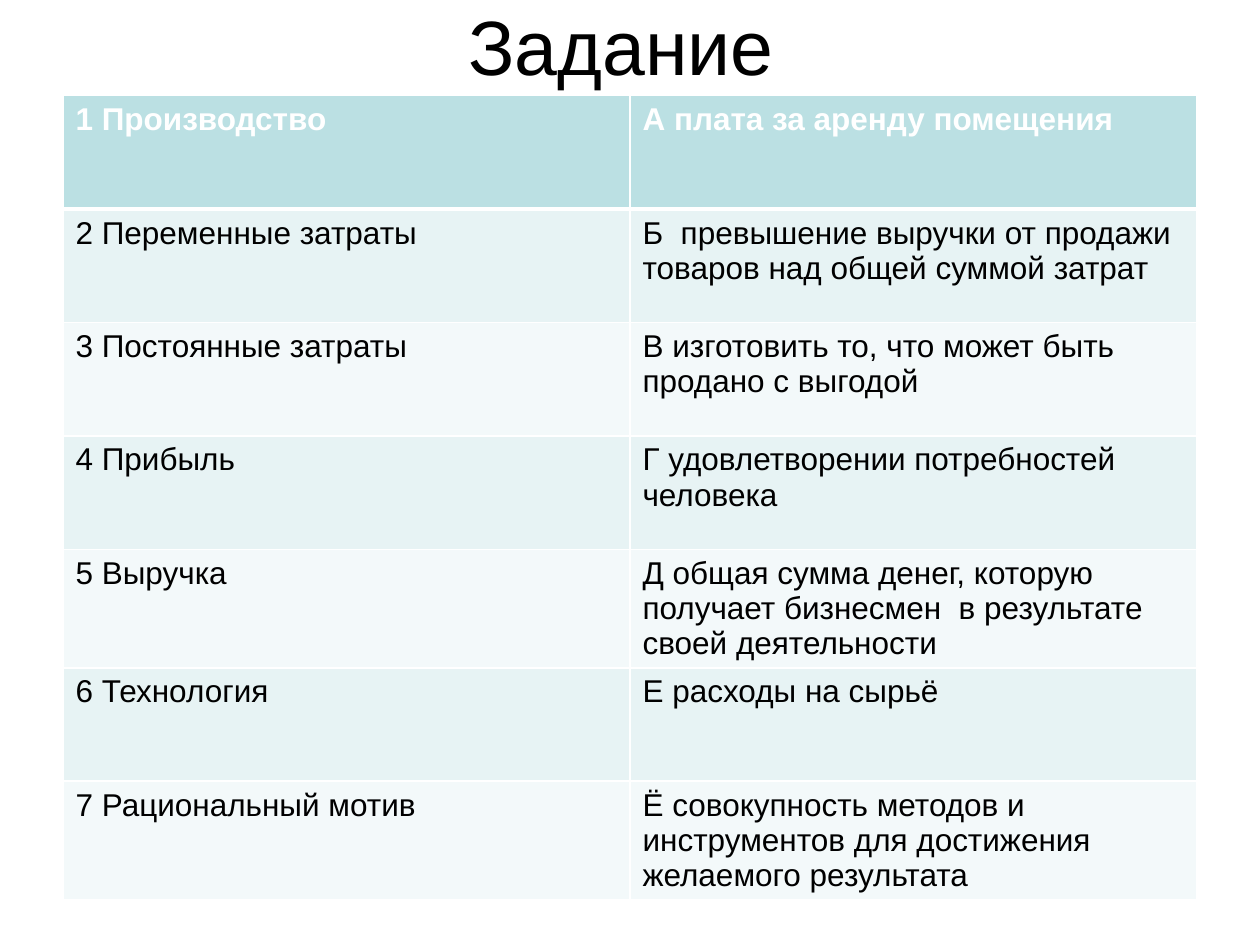
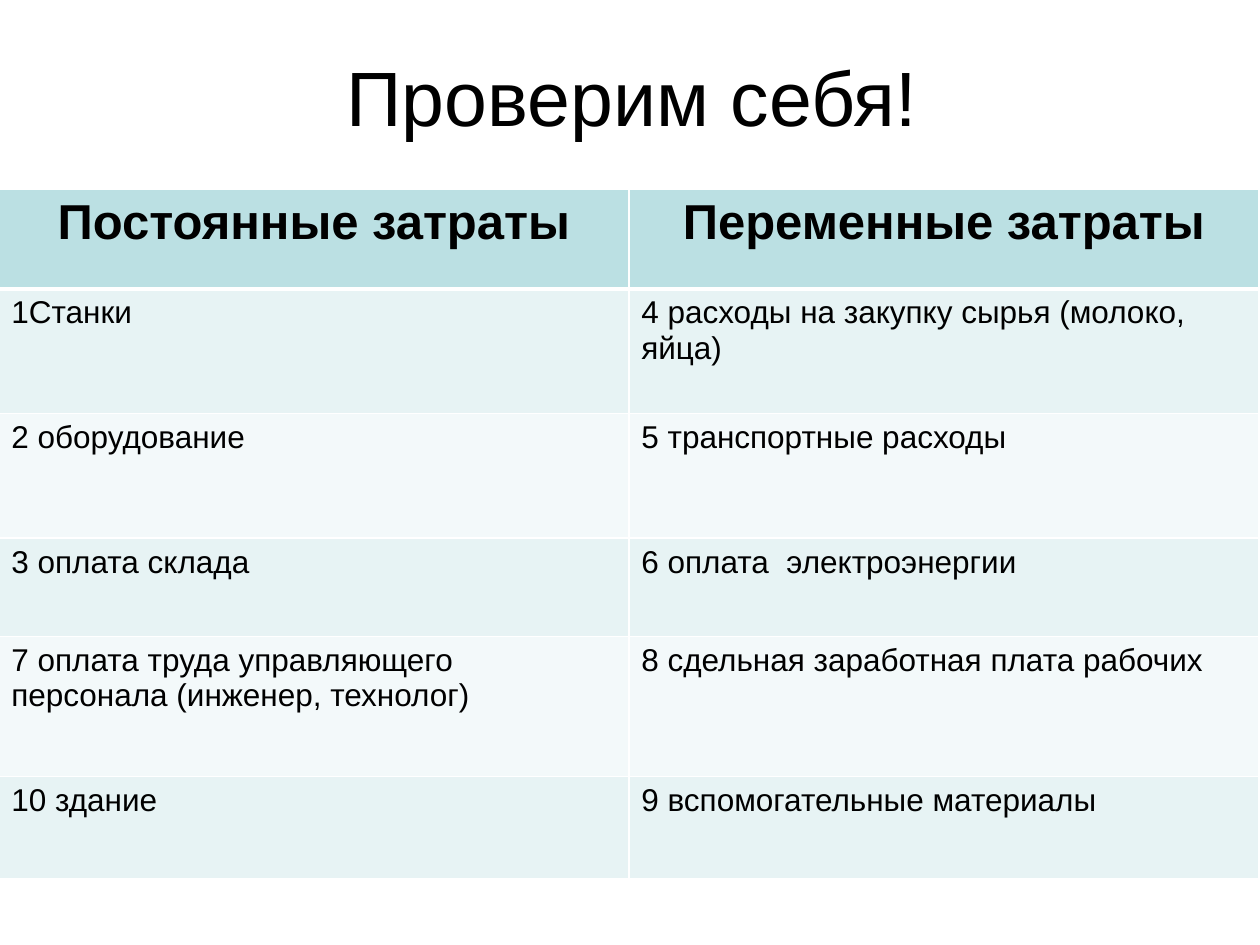
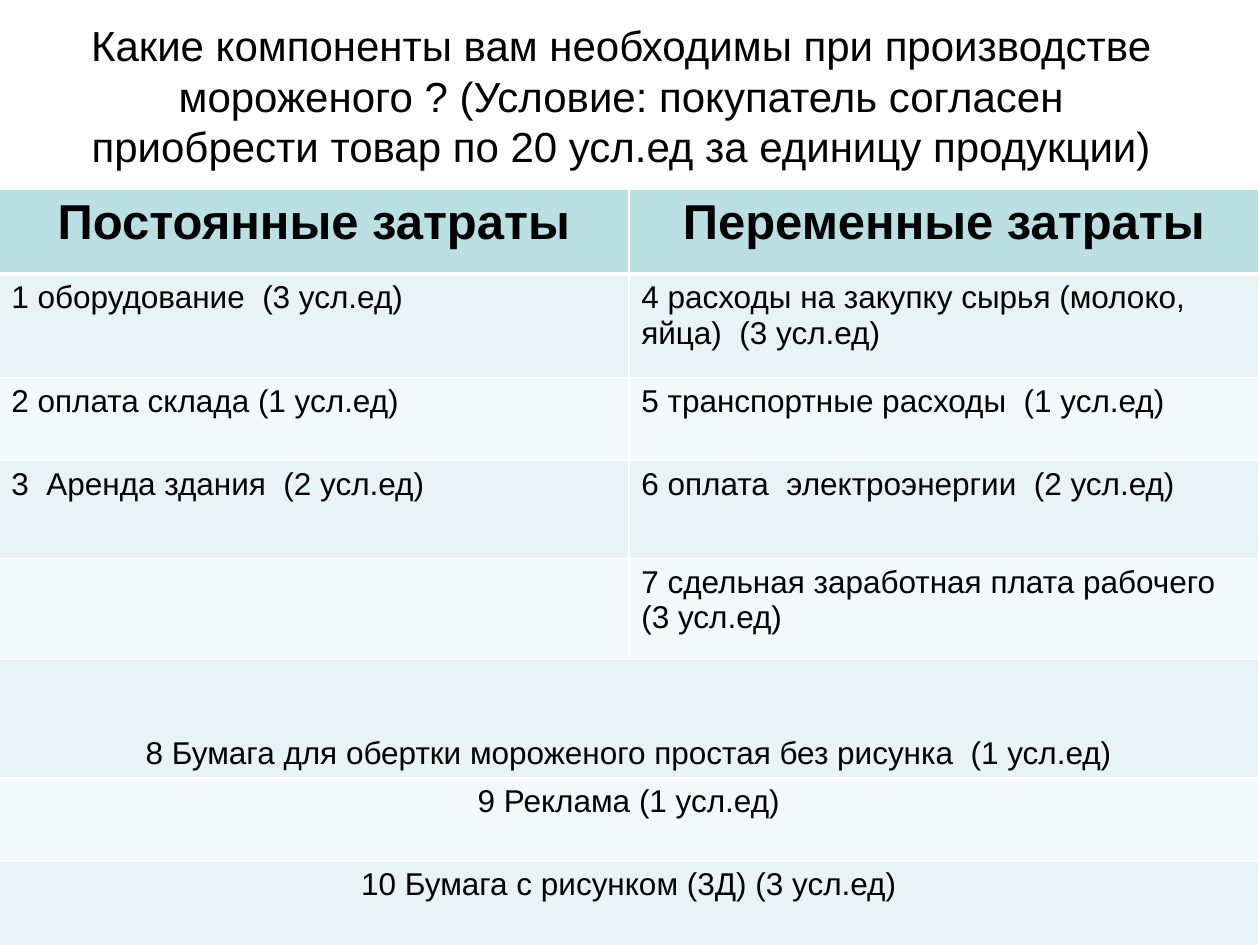
from dataclasses import dataclass

from lxml.etree import SubElement
from pptx import Presentation
from pptx.dml.color import RGBColor
from pptx.enum.text import MSO_ANCHOR, MSO_AUTO_SIZE, PP_ALIGN
from pptx.oxml.ns import qn
from pptx.slide import Slide
from pptx.table import _Cell
from pptx.text.text import TextFrame
from pptx.util import Pt


@dataclass(frozen=True)
class Theme:
    font: str = "Arial"
    text: str = "000000"
    white: str = "FFFFFF"
    header: str = "BBE0E3"
    bands: tuple[str, str] = ("E7F3F4", "F3F9FA")
    title_size: float = 44
    long_title_size: float = 24
    heading_size: float = 28
    body_size: float = 18
    border: float = 1
    header_border: float = 3


THEME = Theme()
TITLE_LEFT, TITLE_WIDTH, TITLE_HEIGHT = 31, 648, 90


@dataclass(frozen=True)
class Row:
    """One table row; a row with a single text is merged across both columns."""
    height: float
    texts: tuple[str, ...]
    anchor: MSO_ANCHOR = MSO_ANCHOR.TOP


@dataclass(frozen=True)
class TableSlide:
    title: str
    title_top: float
    table_left: float
    table_top: float
    column_width: float
    rows: tuple[Row, ...]
    title_size: float = THEME.title_size
    heading_size: float = THEME.heading_size
    heading_color: str = THEME.text
    heading_align: PP_ALIGN = PP_ALIGN.CENTER


COST_HEADINGS = ("Постоянные затраты", "Переменные затраты")
COST_TABLE = dict(title_top=9.4, table_left=-0.72, table_top=108, column_width=360)

TASK_ROWS = (
    ("1 Производство", "А плата за аренду помещения"),
    ("2 Переменные затраты",
     "Б  превышение выручки от продажи товаров над общей суммой затрат"),
    ("3 Постоянные затраты", "В изготовить то, что может быть продано с выгодой"),
    ("4 Прибыль", "Г удовлетворении потребностей человека"),
    ("5 Выручка",
     "Д общая сумма денег, которую получает бизнесмен  в результате своей деятельности"),
    ("6 Технология", "Е расходы на сырьё"),
    ("7 Рациональный мотив",
     "Ё совокупность методов и инструментов для достижения желаемого результата"),
)

SLIDES = (
    TableSlide(
        "Задание", title_top=-19.4, table_left=36, table_top=54.7, column_width=324,
        rows=tuple(Row(64.8, texts) for texts in TASK_ROWS),
        heading_size=THEME.body_size, heading_color=THEME.white,
        heading_align=PP_ALIGN.LEFT,
    ),
    TableSlide(
        " Проверим себя!", **COST_TABLE,
        rows=(
            Row(57.2, COST_HEADINGS),
            Row(71.2, ("1Станки", "4 расходы на закупку сырья (молоко, яйца)")),
            Row(71.2, ("2 оборудование", "5 транспортные расходы")),
            Row(56.2, ("3 оплата склада", "6 оплата  электроэнергии")),
            Row(80, ("7 оплата труда управляющего персонала (инженер, технолог)",
                     "8 сдельная заработная плата рабочих")),
            Row(58.2, ("10 здание", "9 вспомогательные материалы")),
        ),
    ),
    TableSlide(
        "Какие компоненты вам необходимы при производстве мороженого ? "
        "(Условие: покупатель согласен приобрести товар по 20 усл.ед "
        "за единицу продукции)", **COST_TABLE,
        title_size=THEME.long_title_size,
        rows=(
            Row(48.6, COST_HEADINGS),
            Row(59, ("1 оборудование  (3 усл.ед)",
                     "4 расходы на закупку сырья (молоко, яйца)  (3 усл.ед)")),
            Row(47.5, ("2 оплата склада (1 усл.ед)",
                       "5 транспортные расходы  (1 усл.ед)")),
            Row(56.2, ("3  Аренда здания  (2 усл.ед)",
                       "6 оплата  электроэнергии  (2 усл.ед)")),
            Row(57.6, ("", "7 сдельная заработная плата рабочего\n(3 усл.ед)")),
            Row(67.7, ("8 Бумага для обертки мороженого простая без рисунка  (1 усл.ед)",),
                MSO_ANCHOR.BOTTOM),
            Row(47.5, ("9 Реклама (1 усл.ед)",)),
            Row(58.3, ("10 Бумага с рисунком (3Д) (3 усл.ед)",)),
        ),
    ),
)


def write_text(frame: TextFrame, text: str, *, size: float = THEME.body_size,
               color: str = THEME.text, bold: bool = False,
               align: PP_ALIGN = PP_ALIGN.LEFT) -> None:
    frame.text = text
    for paragraph in frame.paragraphs:
        paragraph.alignment = align
        for run in paragraph.runs:
            run.font.name = THEME.font
            run.font.size = Pt(size)
            run.font.bold = bold
            run.font.color.rgb = RGBColor.from_string(color)


def format_cell(cell: _Cell, fill: str, bottom_border: float) -> None:
    properties = cell._tc.get_or_add_tcPr()
    for side in ("L", "R", "T", "B"):
        width = bottom_border if side == "B" else THEME.border
        line = SubElement(properties, qn(f"a:ln{side}"), w=str(Pt(width)))
        SubElement(SubElement(line, qn("a:solidFill")), qn("a:srgbClr"), val=THEME.white)
    cell.fill.solid()
    cell.fill.fore_color.rgb = RGBColor.from_string(fill)


def add_title(slide: Slide, content: TableSlide) -> None:
    title = slide.shapes.title
    title.left, title.top = Pt(TITLE_LEFT), Pt(content.title_top)
    title.width, title.height = Pt(TITLE_WIDTH), Pt(TITLE_HEIGHT)
    frame = title.text_frame
    frame.word_wrap = True
    frame.auto_size = MSO_AUTO_SIZE.NONE
    frame.vertical_anchor = MSO_ANCHOR.MIDDLE
    write_text(frame, content.title, size=content.title_size, align=PP_ALIGN.CENTER)


def add_two_column_table(slide: Slide, content: TableSlide) -> None:
    height = sum(row.height for row in content.rows)
    table = slide.shapes.add_table(
        len(content.rows), 2, Pt(content.table_left), Pt(content.table_top),
        Pt(2 * content.column_width), Pt(height)).table
    for row_index, row in enumerate(content.rows):
        is_header = row_index == 0
        is_merged = len(row.texts) == 1
        table.rows[row_index].height = Pt(row.height)
        fill = THEME.header if is_header else THEME.bands[(row_index - 1) % 2]
        cells = [table.cell(row_index, column) for column in range(2)]
        for cell in cells:
            format_cell(cell, fill, THEME.header_border if is_header else THEME.border)
        if is_merged:
            cells[0].merge(cells[1])
        for cell, text in zip(cells, row.texts):
            cell.vertical_anchor = row.anchor
            if is_header:
                write_text(cell.text_frame, text, size=content.heading_size,
                           color=content.heading_color, bold=True,
                           align=content.heading_align)
            else:
                write_text(cell.text_frame, text,
                           align=PP_ALIGN.CENTER if is_merged else PP_ALIGN.LEFT)


def main() -> None:
    presentation = Presentation()
    presentation.slide_width, presentation.slide_height = Pt(720), Pt(540)
    title_only = presentation.slide_layouts.get_by_name("Title Only")
    for content in SLIDES:
        slide = presentation.slides.add_slide(title_only)
        add_title(slide, content)
        add_two_column_table(slide, content)
    presentation.save("out.pptx")


if __name__ == "__main__":
    main()
